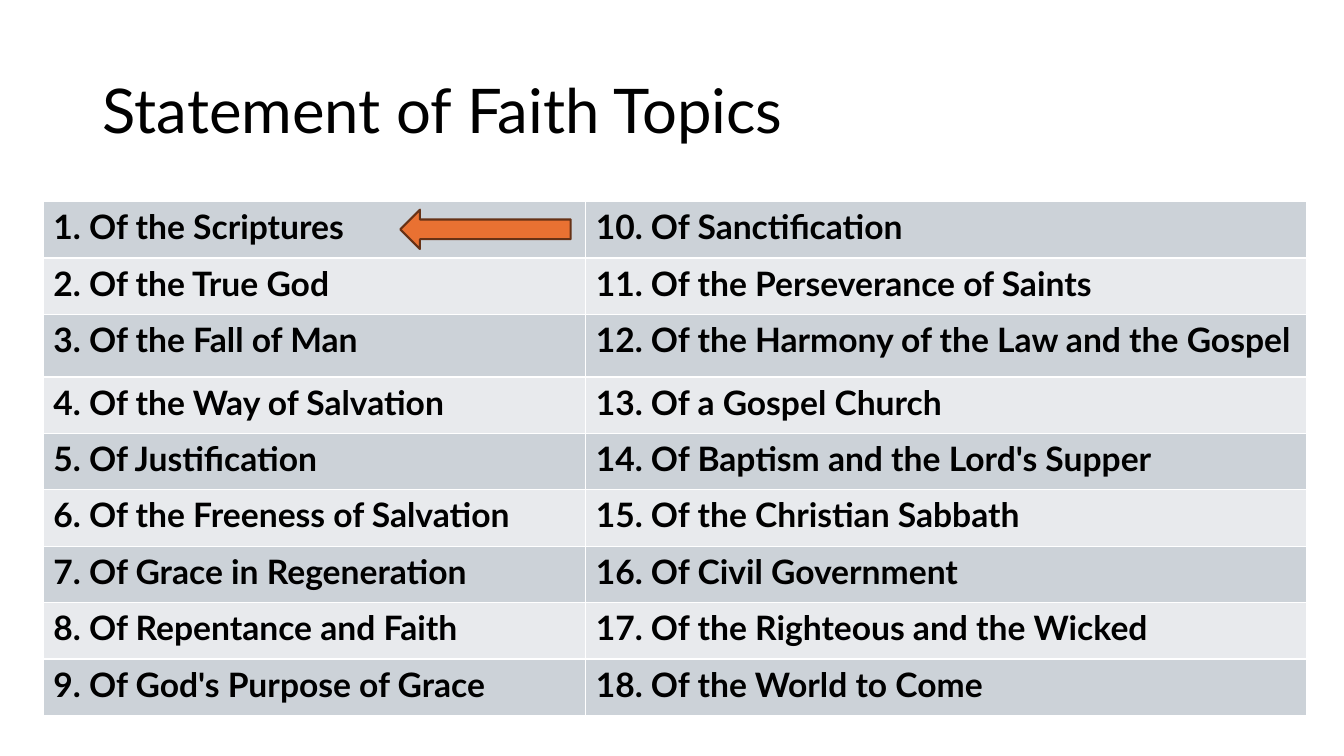
from dataclasses import dataclass

from lxml import etree
from pptx import Presentation
from pptx.dml.color import RGBColor
from pptx.enum.shapes import MSO_SHAPE
from pptx.enum.text import MSO_ANCHOR, MSO_AUTO_SIZE, PP_ALIGN
from pptx.oxml.ns import qn
from pptx.util import Inches, Pt

LEFT_ARROW = MSO_SHAPE.LEFT_ARROW
MIDDLE = MSO_ANCHOR.MIDDLE
NO_AUTOFIT = MSO_AUTO_SIZE.NONE
ALIGN_LEFT = PP_ALIGN.LEFT


@dataclass(frozen=True)
class Theme:
    font: str = "Lato"
    title_size: int = 44
    topic_size: int = 24
    text: str = "000000"
    bands: tuple = ("CCD2D8", "E8EAED")
    border: str = "FFFFFF"
    arrow: str = "E97132"
    arrow_line: str = "663216"


THEME = Theme()
TOPICS = [
    "Of the Scriptures",
    "Of the True God",
    "Of the Fall of Man",
    "Of the Way of Salvation",
    "Of Justification",
    "Of the Freeness of Salvation",
    "Of Grace in Regeneration",
    "Of Repentance and Faith",
    "Of God's Purpose of Grace",
    "Of Sanctification",
    "Of the Perseverance of Saints",
    "Of the Harmony of the Law and the Gospel",
    "Of a Gospel Church",
    "Of Baptism and the Lord's Supper",
    "Of the Christian Sabbath",
    "Of Civil Government",
    "Of the Righteous and the Wicked",
    "Of the World to Come",
]
COLUMN_WIDTHS = (5.38, 7.15)
ROW_COUNT = len(TOPICS) // len(COLUMN_WIDTHS)
ROW_HEIGHTS = [0.56] * ROW_COUNT
ROW_HEIGHTS[2] = 0.62


def write_text(frame, text, size, bold=False, line_spacing=1.0):
    paragraph = frame.paragraphs[0]
    paragraph.alignment = ALIGN_LEFT
    paragraph.line_spacing = line_spacing
    run = paragraph.add_run()
    run.text = text
    run.font.name = THEME.font
    run.font.size = Pt(size)
    run.font.bold = bold
    run.font.color.rgb = RGBColor.from_string(THEME.text)


def style_cell(cell, fill):
    """Draw a thin border on all four sides, then fill the cell."""
    properties = cell._tc.get_or_add_tcPr()
    for side in ("a:lnL", "a:lnR", "a:lnT", "a:lnB"):
        line = etree.SubElement(properties, qn(side), w=str(Pt(1)))
        solid = etree.SubElement(line, qn("a:solidFill"))
        etree.SubElement(solid, qn("a:srgbClr"), val=THEME.border)
    cell.fill.solid()
    cell.fill.fore_color.rgb = RGBColor.from_string(fill)


deck = Presentation()
deck.slide_width, deck.slide_height = Inches(13.33), Inches(7.5)
slide = deck.slides.add_slide(deck.slide_layouts[5])

title = slide.shapes.title
title.left, title.top = Inches(0.92), Inches(0.4)
title.width, title.height = Inches(11.5), Inches(1.45)
title.text_frame.auto_size = NO_AUTOFIT
title.text_frame.vertical_anchor = MIDDLE
write_text(title.text_frame, "Statement of Faith Topics", THEME.title_size, line_spacing=0.9)

topic_table = slide.shapes.add_table(
    ROW_COUNT, len(COLUMN_WIDTHS), Inches(0.43), Inches(2),
    Inches(sum(COLUMN_WIDTHS)), Inches(sum(ROW_HEIGHTS)),
).table
topic_table.first_row = False
topic_table.horz_banding = False
for column, width in zip(topic_table.columns, COLUMN_WIDTHS):
    column.width = Inches(width)
for row, height in zip(topic_table.rows, ROW_HEIGHTS):
    row.height = Inches(height)

for index, topic in enumerate(TOPICS):
    column_index, row_index = divmod(index, ROW_COUNT)
    cell = topic_table.cell(row_index, column_index)
    write_text(cell.text_frame, f"{index + 1}. {topic}", THEME.topic_size, bold=True)
    style_cell(cell, THEME.bands[row_index % 2])

current_topic_arrow = slide.shapes.add_shape(
    LEFT_ARROW, Inches(3.97), Inches(2.08), Inches(1.69), Inches(0.39))
current_topic_arrow.shadow.inherit = False
current_topic_arrow.fill.solid()
current_topic_arrow.fill.fore_color.rgb = RGBColor.from_string(THEME.arrow)
current_topic_arrow.line.color.rgb = RGBColor.from_string(THEME.arrow_line)
current_topic_arrow.line.width = Pt(1.5)

deck.save("out.pptx")
